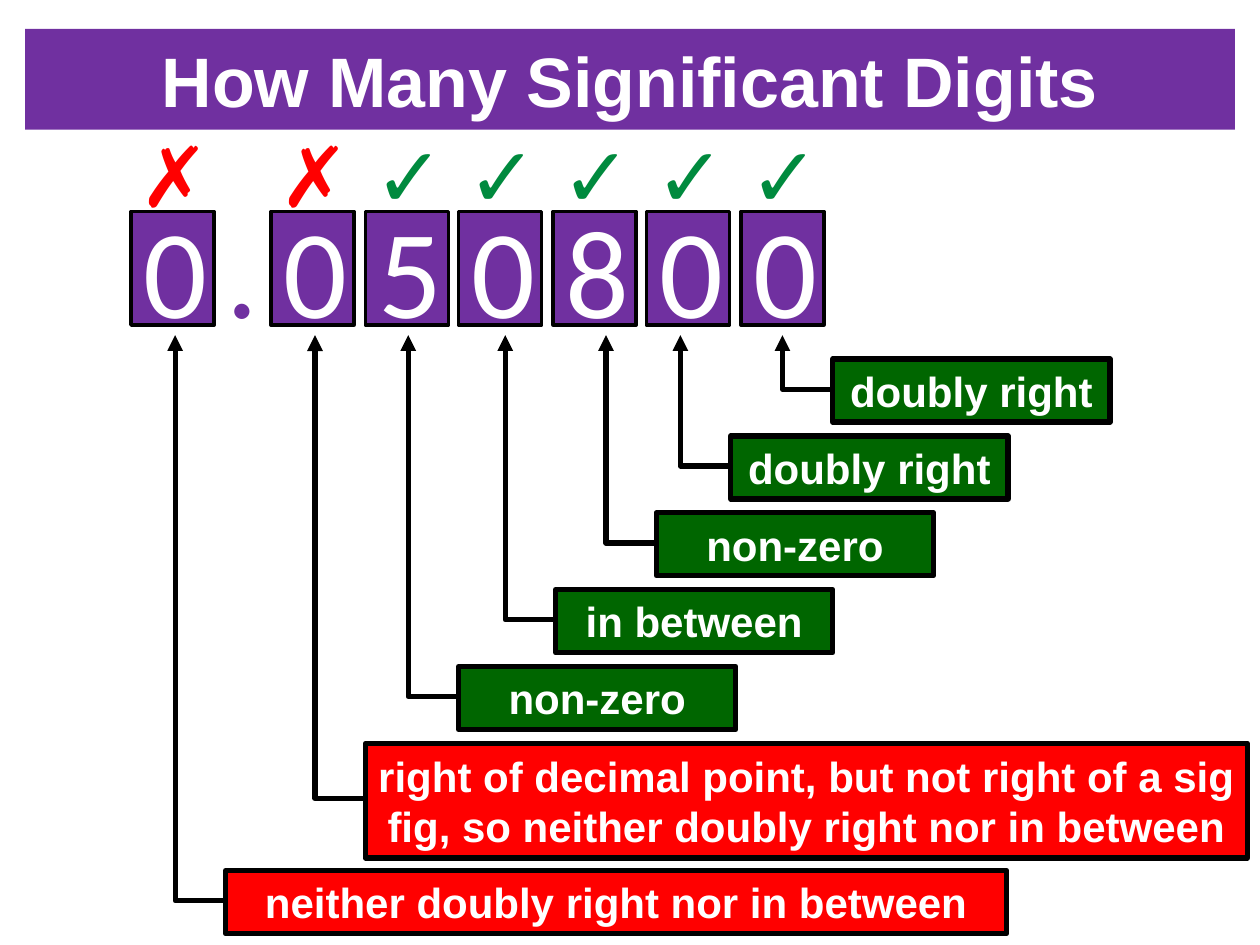
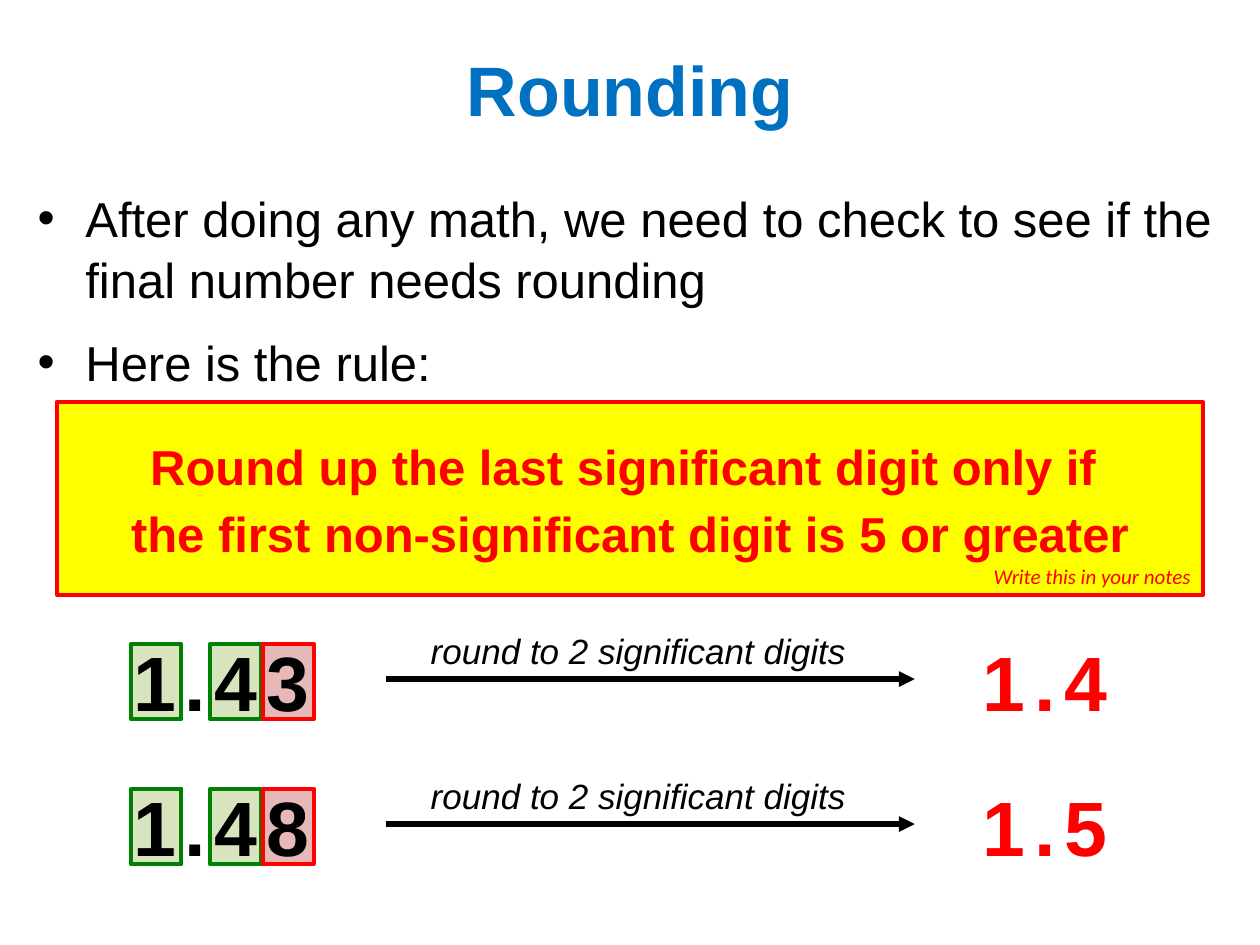
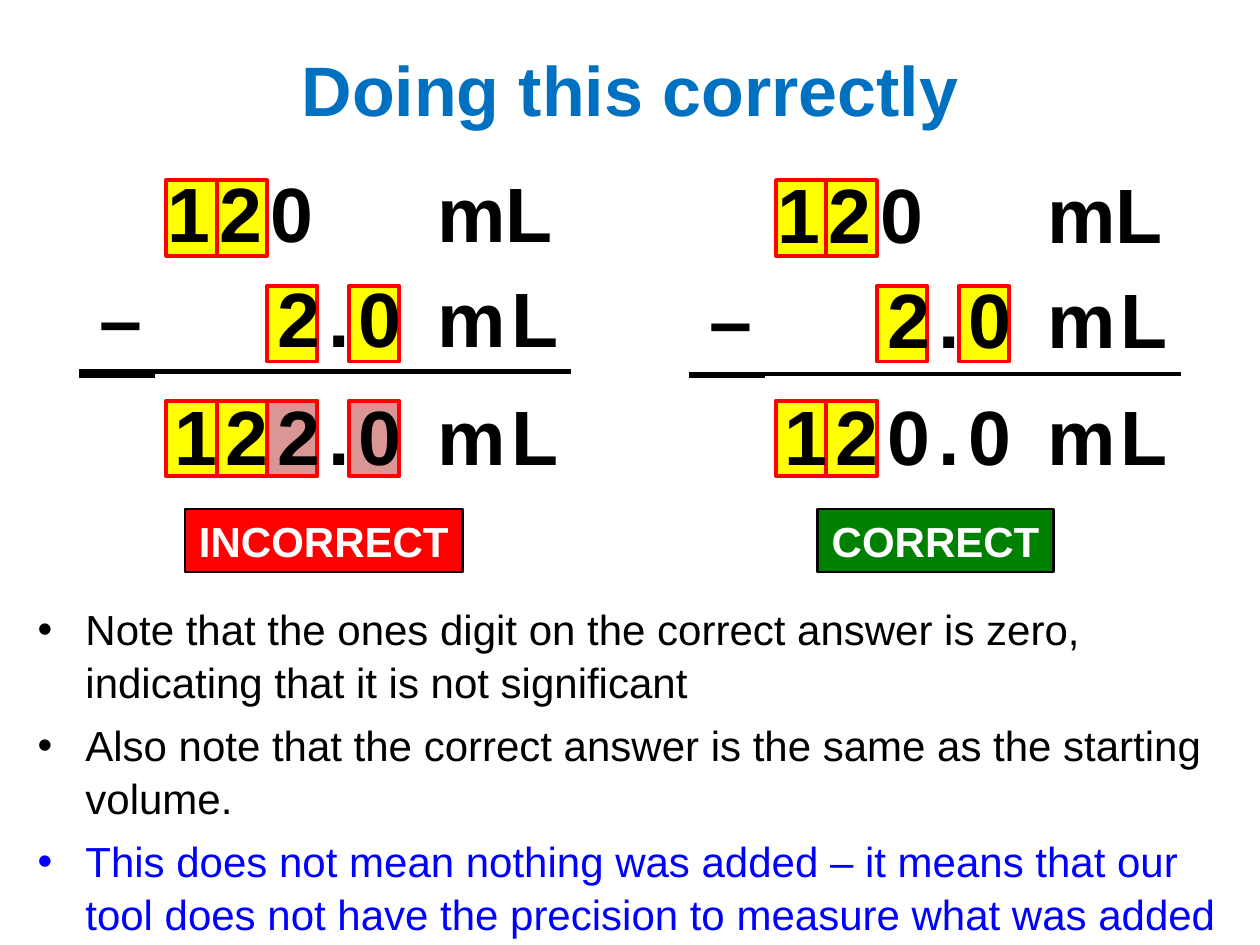
from dataclasses import dataclass, replace
from typing import Optional

from lxml import etree
from pptx import Presentation
from pptx import util as u
from pptx.dml.color import RGBColor
from pptx.enum import shapes, text
from pptx.oxml.ns import qn

PX = 9144  # EMU in one px, 100 px to the inch
COLORS = {
    "black": "000000", "white": "FFFFFF", "purple": "7030A0", "title": "0070C0",
    "red": "FF0000", "forest": "006600", "tick": "008A3E", "green": "008000",
    "yellow": "FFFF00", "pale green": "D7E4BD", "pale red": "E6B9B8",
    "rose": "D99694", "blue": "0000FF",
}
ALIGN = text.PP_ALIGN
ANCHOR = text.MSO_ANCHOR
KIND = shapes.MSO_SHAPE


@dataclass(frozen=True)
class Box:
    left: int
    top: int
    width: int
    height: int

    def emu(self) -> list[u.Emu]:
        return [px(n) for n in (self.left, self.top, self.width, self.height)]


@dataclass(frozen=True)
class Style:
    size: int
    color: str = "black"
    bold: bool = False
    italic: bool = False
    font: str = "Arial"
    tracking: int = 0


@dataclass(frozen=True)
class Para:
    runs: tuple[tuple[str, Style], ...]
    align: ALIGN = ALIGN.LEFT
    before: int = 0
    spacing: Optional[float] = None
    bullet: bool = False
    tab: int = 0


@dataclass(frozen=True)
class Callout:
    box: Box
    words: str
    color: str = "forest"


@dataclass(frozen=True)
class Example:
    top: int
    number: str
    rounded: str


@dataclass(frozen=True)
class Subtraction:
    left: int
    answer: str
    extra_digits: bool
    row_height: int
    verdict: str
    verdict_box: Box
    verdict_color: str


TITLE = Style(40, "title", bold=True)
LABEL = Style(24, "white", bold=True)
SUM = Style(44, bold=True, tracking=5)
UNIT = replace(SUM, tracking=3)
ARITHMETIC = Box(20, 30, 960, 80)


def px(n: int) -> u.Emu:
    return u.Emu(n * PX)


def rgb(name: str) -> RGBColor:
    return RGBColor.from_string(COLORS[name])


def assign(target, values: dict) -> None:
    for key, value in values.items():
        setattr(target, key, value)


def one(words: str, style: Style, **settings) -> Para:
    return Para(((words, style),), **settings)


def write(frame, *paras: Para, anchor=ANCHOR.TOP, wrap=True, insets=(10, 5, 10, 5)) -> None:
    sides = ("margin_left", "margin_top", "margin_right", "margin_bottom")
    assign(frame, {"word_wrap": wrap, "vertical_anchor": anchor,
                   "auto_size": text.MSO_AUTO_SIZE.NONE,
                   **dict(zip(sides, map(px, insets)))})
    write_paragraphs(frame, paras)


def write_paragraphs(frame, paras: tuple[Para, ...]) -> None:
    for number, para in enumerate(paras):
        line = frame.add_paragraph() if number else frame.paragraphs[0]
        assign(line, {"alignment": para.align, "space_before": u.Pt(para.before),
                      "line_spacing": para.spacing})
        props = line._p.get_or_add_pPr()
        if para.bullet:
            props.set("marL", str(px(38)))
            props.set("indent", str(px(-38)))
            etree.SubElement(props, qn("a:buFont"), typeface="Arial")
            etree.SubElement(props, qn("a:buChar"), char="•")
        if para.tab:
            stops = etree.SubElement(props, qn("a:tabLst"))
            etree.SubElement(stops, qn("a:tab"), pos=str(px(para.tab)), algn="l")
        for words, style in para.runs:
            run = line.add_run()
            run.text = words
            assign(run.font, {"size": u.Pt(style.size), "name": style.font,
                              "bold": style.bold, "italic": style.italic})
            run.font.color.rgb = rgb(style.color)
            if style.tracking:
                run._r.get_or_add_rPr().set("spc", str(style.tracking * 100))


def add_panel(slide, box: Box, fill: str, border: str, weight: float, kind=KIND.RECTANGLE):
    panel = slide.shapes.add_shape(kind, *box.emu())
    panel.shadow.inherit = False
    panel.fill.solid()
    panel.fill.fore_color.rgb = rgb(fill)
    panel.line.color.rgb = rgb(border)
    panel.line.width = u.Pt(weight)
    return panel


def add_words(slide, box: Box, *paras: Para, **settings) -> None:
    write(slide.shapes.add_textbox(*box.emu()).text_frame, *paras, **settings)


def add_arrowhead(line) -> None:
    etree.SubElement(line._get_or_add_ln(), qn("a:tailEnd"), type="triangle")


def add_titled_slide(deck, title: str, box: Box = ARITHMETIC, style: Style = TITLE):
    slide = deck.slides.add_slide(deck.slide_layouts[5])
    heading = slide.shapes.title
    assign(heading, dict(zip(("left", "top", "width", "height"), box.emu())))
    write(heading.text_frame, one(title, style, align=ALIGN.CENTER), anchor=ANCHOR.MIDDLE)
    return slide


def add_callout(slide, callout: Callout) -> None:
    """Draw a label whose elbow leader points up to the row of digits."""
    box = callout.box
    label = add_panel(slide, box, callout.color, "black", 3, KIND.LINE_CALLOUT_2)
    elbow, tip = -40 / box.width, (266 - box.top) / box.height
    for number, value in enumerate((0.48, 0, 0.48, elbow, tip, elbow)):
        label.adjustments[number] = value
    add_arrowhead(label.line)
    write(label.text_frame, one(callout.words, LABEL, align=ALIGN.CENTER), anchor=ANCHOR.MIDDLE)


def build_digits(deck) -> None:
    slide = add_titled_slide(deck, "How Many Significant Digits", Box(20, 23, 960, 80),
                             replace(TITLE, color="white"))
    slide.shapes.title.fill.solid()
    slide.shapes.title.fill.fore_color.rgb = rgb("purple")

    reasons = ("doubly right", "doubly right", "non-zero", "in between", "non-zero")
    for row, (left, reason) in enumerate(zip((661, 580, 521, 441, 364), reasons)):
        add_callout(slide, Callout(Box(left, 285 + 61 * row, 220, 50), reason))
    add_callout(slide, Callout(Box(179, 691, 620, 50),
                               "neither doubly right nor in between", "red"))
    add_callout(slide, Callout(
        Box(290, 590, 700, 91),
        "right of decimal point, but not right of a sig fig, "
        "so neither doubly right nor in between", "red"))

    figure = Style(72, "white", font="Calibri")
    lefts = [104] + [round(215 + 74.6 * n) for n in range(6)]
    for number, (left, digit) in enumerate(zip(lefts, "0050800")):
        tile = add_panel(slide, Box(left, 168, 66, 90), "purple", "black", 2)
        write(tile.text_frame, one(digit, figure, align=ALIGN.CENTER),
              anchor=ANCHOR.MIDDLE, wrap=False, insets=(10, 0, 5, 0))
        mark, color = ("✗", "red") if number < 2 else ("✓", "tick")
        add_words(slide, Box(left + 7, 113, 52, 50),
                  one(mark, Style(48, color, bold=True), align=ALIGN.CENTER),
                  anchor=ANCHOR.MIDDLE, insets=(0, 0, 0, 0))
    add_words(slide, Box(180, 168, 25, 90),
              one(".", replace(figure, color="purple"), align=ALIGN.CENTER),
              anchor=ANCHOR.MIDDLE, wrap=False, insets=(0, 0, 0, 0))


def add_example(slide, example: Example) -> None:
    top = example.top
    for left, fill, border in ((104, "pale green", "green"), (167, "pale green", "green"),
                               (209, "pale red", "red")):
        add_panel(slide, Box(left, top + 12, 40, 60), fill, border, 2.25)
    add_words(slide, Box(96, top, 175, 84), one(example.number, SUM))
    add_words(slide, Box(332, top - 4, 352, 44),
              one("round to 2 significant digits", Style(20, italic=True)), wrap=False)
    arrow = slide.shapes.add_connector(shapes.MSO_CONNECTOR.STRAIGHT,
                                       *map(px, (306, top + 40, 726, top + 40)))
    arrow.line.color.rgb = rgb("black")
    arrow.line.width = u.Pt(3)
    add_arrowhead(arrow.line)
    etree.SubElement(arrow._element.spPr, qn("a:effectLst"))
    add_words(slide, Box(770, top, 134, 84), one(example.rounded, replace(SUM, color="red")))


def build_rounding(deck) -> None:
    slide = add_titled_slide(deck, "Rounding")
    rule_box = add_panel(slide, Box(45, 319, 910, 153), "yellow", "red", 2.25)
    write(rule_box.text_frame,
          one("Write this in your notes", Style(12, "red", italic=True, font="Calibri"),
              align=ALIGN.RIGHT), anchor=ANCHOR.BOTTOM)
    plain, rule = Style(28), Style(28, "red", bold=True)
    add_words(
        slide, Box(20, 142, 960, 376),
        one("After doing any math, we need to check to see if the final number needs rounding",
            plain, before=12, spacing=1.05, bullet=True),
        one("Here is the rule:", plain, before=12, spacing=1.05, bullet=True),
        one("Round up the last significant digit only if ", rule,
            align=ALIGN.CENTER, before=24, spacing=1.05),
        one("the first non-significant digit is 5 or greater", rule,
            align=ALIGN.CENTER, before=3, spacing=1.05))
    for example in (Example(499, "1.43", "1.4"), Example(614, "1.48", "1.5")):
        add_example(slide, example)


def set_borders(cell, ruled: str) -> None:
    """Rule the sides named in `ruled` (of L, R, T, B) and clear the others."""
    props = cell._tc.get_or_add_tcPr()
    for side in "LRTB":
        edge = etree.SubElement(props, qn(f"a:ln{side}"))
        if side in ruled:
            edge.set("w", str(u.Pt(3)))
            fill = etree.SubElement(edge, qn("a:solidFill"))
            etree.SubElement(fill, qn("a:srgbClr"), val=COLORS["black"])
        else:
            etree.SubElement(edge, qn("a:noFill"))
    etree.SubElement(props, qn("a:noFill"))


def add_sum_rows(slide, left: int, top: int, height: int,
                 rows: list[tuple[str, Para, tuple[str, str]]]) -> None:
    """Add a table; each row is a sign, an amount and the ruled sides of both cells."""
    frame = slide.shapes.add_table(len(rows), 2, *Box(left, top, 390, height * len(rows)).emu())
    table = frame.table
    assign(table, {"first_row": False, "horz_banding": False})
    for column, width in zip(table.columns, (60, 330)):
        column.width = px(width)
    for number, (sign, amount, ruled) in enumerate(rows):
        table.rows[number].height = px(height)
        for column, sides in enumerate(ruled):
            cell = table.cell(number, column)
            cell.vertical_anchor = ANCHOR.MIDDLE
            set_borders(cell, sides)
            para = amount if column else one(sign, UNIT, align=ALIGN.RIGHT)
            write_paragraphs(cell.text_frame, (para,))


def measured(number: str) -> Para:
    return Para(((number, SUM), (" mL", UNIT)), align=ALIGN.RIGHT)


def add_subtraction(slide, work: Subtraction) -> None:
    answer_fills = {0: "yellow", 1: "yellow"}
    if work.extra_digits:
        answer_fills |= {2: "rose", 3: "rose"}
    marked = {143: {0: "yellow", 1: "yellow"}, 227: {2: "yellow", 3: "yellow"},
              318: answer_fills}
    for top, fills in marked.items():
        for place, fill in fills.items():
            left = work.left + (69, 109, 149, 214)[place]
            add_panel(slide, Box(left, top, 40, 60), fill, "red", 2.25)

    add_sum_rows(slide, work.left, 298, 100, [("", measured(work.answer), ("T", ""))])
    start = ("", Para((("120", SUM), ("\tmL", replace(SUM, tracking=0))), tab=214), ("", ""))
    taken = ("–", measured("2.0"), ("B", "B"))
    if work.extra_digits:
        add_sum_rows(slide, work.left, 131, work.row_height, [start])
        add_sum_rows(slide, work.left, 215, work.row_height, [taken])
    else:
        add_sum_rows(slide, work.left, 131, work.row_height, [start, taken])

    verdict = add_panel(slide, work.verdict_box, work.verdict_color, "black", 1.5)
    write(verdict.text_frame, one(work.verdict, LABEL, align=ALIGN.CENTER), wrap=False,
          anchor=ANCHOR.MIDDLE)


def build_subtraction(deck) -> None:
    slide = add_titled_slide(deck, "Doing this correctly")
    for work in (
        Subtraction(63, "122.0", True, 80, "INCORRECT", Box(147, 404, 220, 50), "red"),
        Subtraction(547, "120.0", False, 83, "CORRECT", Box(649, 404, 187, 50), "green"),
    ):
        add_subtraction(slide, work)
    notes = (
        ("Note that the ones digit on the correct answer is zero, "
         "indicating that it is not significant", "black"),
        ("Also note that the correct answer is the same as the starting volume.", "black"),
        ("This does not mean nothing was added – it means that our tool "
         "does not have the precision to measure what was added", "blue"),
    )
    add_words(slide, Box(20, 472, 960, 259),
              *(one(words, Style(24, color), before=6 if number else 0,
                    spacing=1.05, bullet=True)
                for number, (words, color) in enumerate(notes)))


def main() -> None:
    deck = Presentation()
    deck.slide_width, deck.slide_height = px(1000), px(750)
    for build in (build_digits, build_rounding, build_subtraction):
        build(deck)
    deck.save("out.pptx")


if __name__ == "__main__":
    main()
